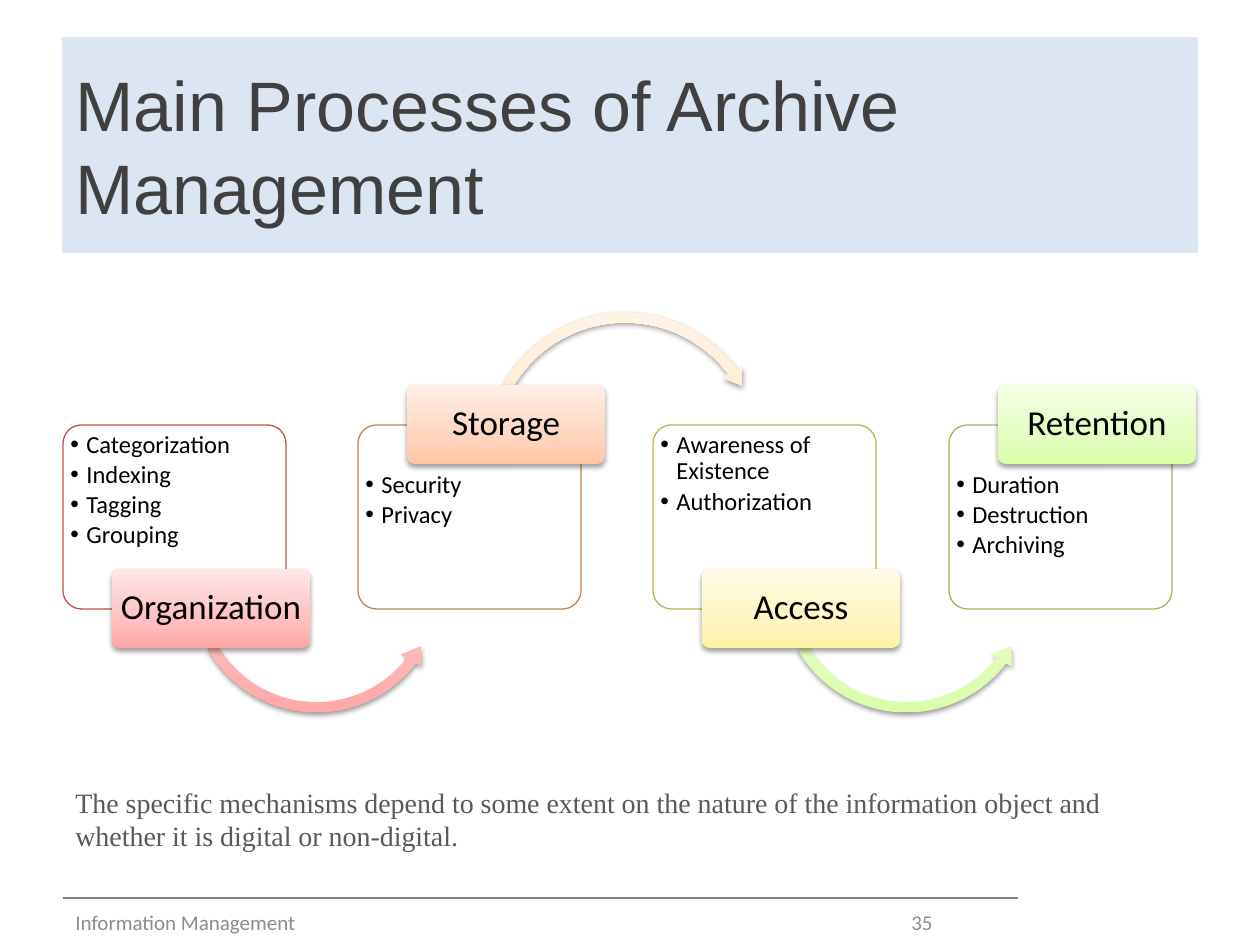
from lxml.etree import SubElement
from pptx import Presentation
from pptx.dml.color import RGBColor
from pptx.enum.shapes import MSO_CONNECTOR as Connector, MSO_SHAPE as Shape
from pptx.enum.text import MSO_ANCHOR as Anchor, PP_ALIGN as Align
from pptx.oxml.ns import qn
from pptx.util import Emu, Pt

EMU_PER_PX = 914400 / 126

RED = ("FFA6A5", "FFC0BF", "FFE7E7")
ORANGE = ("FFC5A5", "FFD5BF", "FFEFE7")
AMBER = ("FFDAA5", "FEE4C0", "FFF4E7")
YELLOW = ("FFF2A5", "FEF5C0", "FFFBE7")
GREEN = ("DAFDA7", "E4FCC2", "F5FFE7")

PROCESSES = [
    ("Organization", ["Categorization", "Indexing", "Tagging", "Grouping"], "C0504D", RED, RED),
    ("Storage", ["Security", "Privacy"], "BE8351", ORANGE, AMBER),
    ("Access", ["Awareness of Existence", "Authorization"], "BDB255", YELLOW, GREEN),
    ("Retention", ["Duration", "Destruction", "Archiving"], "9BBB59", GREEN, None),
]


def px(length):
    return Emu(int(length * EMU_PER_PX))


def color(value):
    return RGBColor.from_string(value)


def add_xml(parent, tag, **attributes):
    return SubElement(parent, qn(tag), {name: str(value) for name, value in attributes.items()})


def set_font(para, name, size, value):
    para.font.name = name
    para.font.size = Pt(size)
    para.font.color.rgb = color(value)


def set_margins(frame, left, top, right, bottom):
    frame.margin_left, frame.margin_top = px(left), px(top)
    frame.margin_right, frame.margin_bottom = px(right), px(bottom)


def add_text(page, box, text, name, size, value, align=Align.LEFT, anchor=Anchor.MIDDLE):
    frame = page.shapes.add_textbox(*map(px, box)).text_frame
    frame.word_wrap = True
    frame.vertical_anchor = anchor
    para = frame.paragraphs[0]
    para.text = text
    para.alignment = align
    set_font(para, name, size, value)


def add_shape(page, kind, box, adjustments):
    shape = page.shapes.add_shape(kind, *map(px, box))
    shape.shadow.inherit = False
    for index, value in enumerate(adjustments):
        shape.adjustments[index] = value
    return shape


def add_glossy_shape(page, kind, box, adjustments, gradient):
    shape = add_shape(page, kind, box, adjustments)
    shape.line.fill.background()
    properties = shape._element.spPr
    fill = add_xml(properties, "a:gradFill", rotWithShape=1)
    stops = add_xml(fill, "a:gsLst")
    for position, value in zip((0, 35000, 100000), gradient):
        add_xml(add_xml(stops, "a:gs", pos=position), "a:srgbClr", val=value)
    add_xml(fill, "a:lin", ang=16200000, scaled=1)
    properties.find(qn("a:ln")).addprevious(fill)
    shadow = add_xml(properties.find(qn("a:effectLst")), "a:outerShdw",
                     blurRad=40000, dist=20000, dir=5400000, rotWithShape=0)
    add_xml(add_xml(shadow, "a:srgbClr", val="000000"), "a:alpha", val=38000)
    return shape


def add_panel(page, box, items, outline, text_top):
    panel = add_shape(page, Shape.ROUNDED_RECTANGLE, box, [0.1])
    panel.fill.solid()
    panel.fill.fore_color.rgb = color("FFFFFF")
    white = panel._element.spPr.find(qn("a:solidFill")).find(qn("a:srgbClr"))
    add_xml(white, "a:alpha", val=90000)
    panel.line.color.rgb = color(outline)
    panel.line.width = Pt(0.75)
    frame = panel.text_frame
    frame.word_wrap = True
    frame.vertical_anchor = Anchor.TOP
    set_margins(frame, 2, text_top, 2, 2)
    for index, item in enumerate(items):
        para = frame.add_paragraph() if index else frame.paragraphs[0]
        para.text = item
        para.alignment = Align.LEFT
        para.line_spacing = 0.9
        para.space_after = Pt(2)
        properties = para._p.get_or_add_pPr()
        properties.set("marL", str(px(16)))
        properties.set("indent", str(px(-16)))
        add_xml(properties, "a:buFont", typeface="Arial")
        add_xml(properties, "a:buChar", char="•")
        set_font(para, "Calibri", 14, "000000")


def add_label(page, box, text, gradient):
    label = add_glossy_shape(page, Shape.ROUNDED_RECTANGLE, box, [0.1], gradient)
    frame = label.text_frame
    frame.word_wrap = True
    frame.vertical_anchor = Anchor.MIDDLE
    set_margins(frame, 5, 4, 5, 4)
    para = frame.paragraphs[0]
    para.text = text
    para.alignment = Align.CENTER
    para.line_spacing = 0.9
    set_font(para, "Calibri", 20, "000000")


def add_process(page, box, process, label_on_top):
    name, items, outline, gradient, arrow_gradient = process
    left, top, width, height = box
    add_panel(page, box, items, outline, 42 if label_on_top else 2)
    if arrow_gradient and label_on_top:
        add_glossy_shape(page, Shape.CIRCULAR_ARROW, (left + 121, top - 119, 292, 292),
                         [0.034, 4.262, 193.983, 125.755, 0.04], arrow_gradient)
    elif arrow_gradient:
        add_glossy_shape(page, Shape.LEFT_CIRCULAR_ARROW, (left + 122, top + 31, 263, 263),
                         [0.038, 4.766, 22.521, 90.245, 0.044], arrow_gradient)
    label_top = top - 40 if label_on_top else top + height - 40
    add_label(page, (left + 49, label_top, 198, 79), name, gradient)


def add_process_chain(page, box):
    left, top, width, height = box
    for index, process in enumerate(PROCESSES):
        panel_left = left + index * (width - 248) * 2 // 6
        add_process(page, (panel_left, top, 223, height), process, index % 2 == 1)


def add_title(page, box):
    title = page.shapes.title
    title.left, title.top, title.width, title.height = map(px, box)
    title.fill.solid()
    title.fill.fore_color.rgb = color("DCE6F2")
    title.line.color.rgb = color("DCE6F2")
    title.line.width = Pt(0.75)
    title.text_frame.vertical_anchor = Anchor.MIDDLE
    para = title.text_frame.paragraphs[0]
    para.text = "Main Processes of Archive Management"
    para.alignment = Align.LEFT
    set_font(para, "Arial", 40, "404040")


def add_footer(page, box):
    left, top, width, height = box
    rule = page.shapes.add_connector(Connector.STRAIGHT, px(left), px(top), px(left + width), px(top))
    rule.line.color.rgb = color("808080")
    rule.line.width = Pt(0.75)
    add_xml(rule._element.spPr, "a:effectLst")
    add_text(page, (left, top + 5, 400, height - 5), "Information Management", "Calibri", 12, "8C8C8C")
    add_text(page, (left + 788, top + 5, 94, height - 5), "35", "Calibri", 12, "8C8C8C", Align.RIGHT)


def main():
    deck = Presentation()
    deck.slide_width, deck.slide_height = px(1260), px(945)
    page = deck.slides.add_slide(deck.slide_layouts[5])
    add_title(page, (63, 38, 1134, 214))
    add_process_chain(page, (63, 425, 1134, 184))
    add_text(page, (63, 779, 1124, 81),
             "The specific mechanisms depend to some extent on the nature of the information object "
             "and whether it is digital or non-digital.",
             "Times New Roman", 16, "595959", anchor=Anchor.TOP)
    add_footer(page, (63, 898, 955, 44))
    deck.save("out.pptx")


if __name__ == "__main__":
    main()
